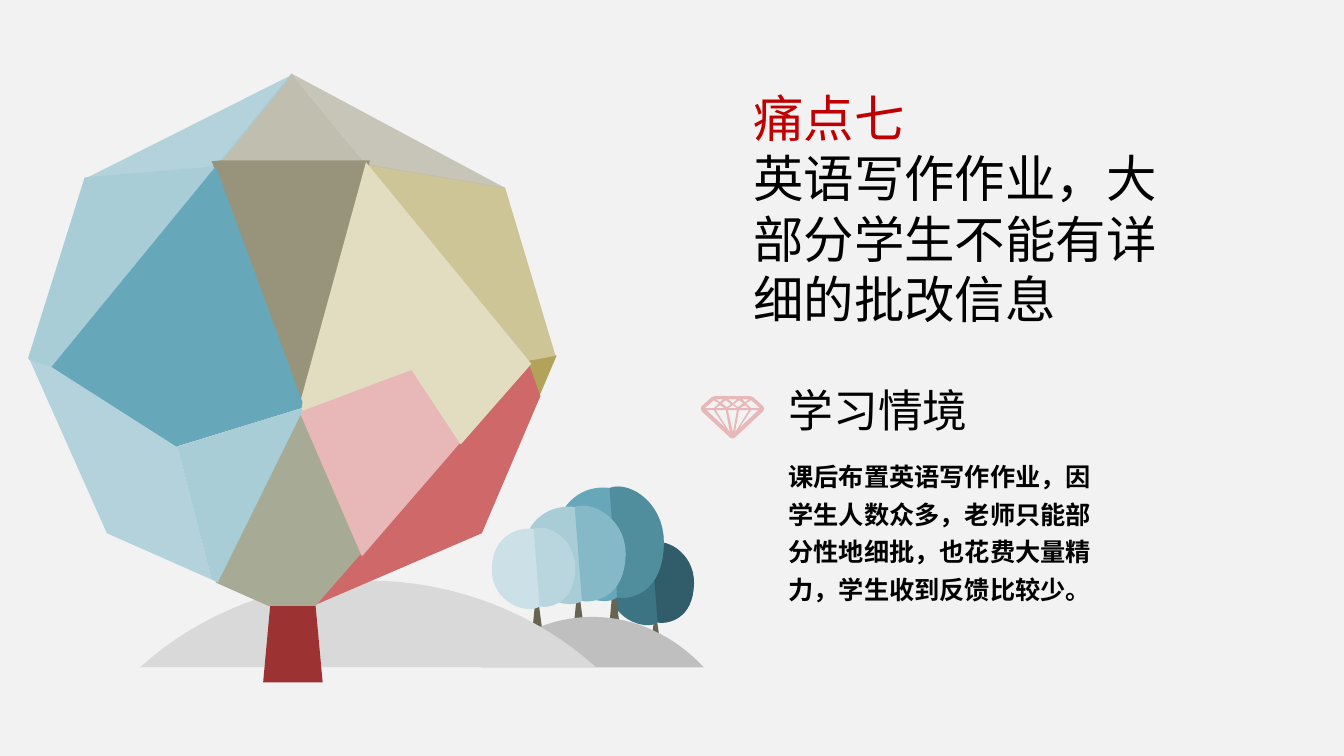
from dataclasses import dataclass

from lxml.etree import SubElement
from pptx import Presentation
from pptx.dml.color import RGBColor
from pptx.enum.text import MSO_ANCHOR, MSO_AUTO_SIZE, PP_ALIGN
from pptx.oxml.ns import qn
from pptx.shapes.base import BaseShape
from pptx.slide import Slide
from pptx.util import Inches, Pt

PAPER = RGBColor(0xF2, 0xF2, 0xF2)
BLACK = RGBColor(0x00, 0x00, 0x00)
NEAR_BLACK = RGBColor(0x01, 0x01, 0x01)
TITLE_RED = RGBColor(0xC0, 0x00, 0x00)
BARK = RGBColor(0x67, 0x64, 0x51)
RED_TRUNK = RGBColor(0x9D, 0x32, 0x32)
RED = RGBColor(0xCF, 0x68, 0x68)
PINK = RGBColor(0xE8, 0xB7, 0xB7)
DEEP_TEAL = RGBColor(0x3C, 0x74, 0x83)
TEAL = RGBColor(0x66, 0xA7, 0xB9)
SKY = RGBColor(0xA8, 0xCD, 0xD7)
PALE_SKY = RGBColor(0xCB, 0xE1, 0xE7)
BACK_HILL = RGBColor(0xBF, 0xBF, 0xBF)
FRONT_HILL = RGBColor(0xD9, 0xD9, 0xD9)
STONE = RGBColor(0xC0, 0xBE, 0xAF)
OLIVE = RGBColor(0xB1, 0xA3, 0x5A)
SAND = RGBColor(0xCE, 0xC5, 0x97)
CREAM = RGBColor(0xE2, 0xDC, 0xC1)
TAUPE = RGBColor(0x98, 0x94, 0x7C)
SAGE = RGBColor(0xA7, 0xAA, 0x95)

# A step of two numbers is a line to a point; six numbers are a cubic curve.
Step = tuple[float, ...]
Outline = list[Step]
Box = tuple[float, float, float, float]
CURVE_PIECES = 16

# Outlines in a unit box
CROWN_RIGHT: Outline = [(0.65, 0.99, 0.96, 0.97, 1, 0.57), (1.05, 0.16, 0.7, -0.06, 0.51, 0.01)]
CROWN: Outline = [(0.51, 0.01), (0.29, -0.02, 0.02, 0.12, 0.01, 0.49),
                  (-0.01, 0.92, 0.44, 1.08, 0.58, 0.97), *CROWN_RIGHT]
SHADE: Outline = [(0.51, 0.01), (0.58, 0.97), *CROWN_RIGHT]
STEM: Outline = [(0.3, 0), (0, 1), (1, 1), (0.6, 0)]
HILL: Outline = [(0.5, 0), (0.31, 0, 0.13, 0.38, 0, 1), (1, 1), (0.87, 0.38, 0.69, 0, 0.5, 0)]


@dataclass
class Tree:
    stem: Box
    crown: Box
    color: RGBColor
    shade: RGBColor
    shade_opacity: int


@dataclass
class Facet:
    color: RGBColor
    points: Outline
    opacity: int = 100


@dataclass
class Words:
    lines: list[str]
    colors: list[RGBColor]
    box: Box
    font: str
    size: int
    bold: bool = False
    spacing: float = 1.0


TREES = [
    Tree((6.46, 6.14, 0.09, 0.25), (6.03, 5.38, 0.85, 0.82), DEEP_TEAL, NEAR_BLACK, 20),
    Tree((6.04, 5.88, 0.11, 0.36), (5.49, 4.83, 1.09, 1.13), TEAL, DEEP_TEAL, 50),
    Tree((5.69, 5.92, 0.10, 0.30), (5.18, 5.02, 1.02, 0.97), SKY, TEAL, 50),
    Tree((5.28, 5.96, 0.10, 0.30), (4.87, 5.24, 0.83, 0.80), PALE_SKY, SKY, 50),
]

BIG_TREE = [
    Facet(RED_TRUNK, [(3.2, 6.77), (2.61, 6.77), (2.68, 6.01), (3.13, 6.01)]),
    Facet(STONE, [(2.22, 1.64), (3.64, 1.64), (2.89, 0.73), (2.14, 1.65)]),
    Facet(OLIVE, [(5.51, 3.52), (5.22, 3.56), (5.35, 3.93), (5.52, 3.53)]),
    Facet(SKY, [(2.9, 0.74), (0.85, 1.77), (2.15, 1.66)], 85),
    Facet(SAND, [(3.64, 1.63), (5.24, 3.58), (5.51, 3.53), (5.01, 1.86), (3.66, 1.63)]),
    Facet(STONE, [(3.65, 1.64), (5.01, 1.87), (5, 1.86), (2.89, 0.73), (3.64, 1.64)], 85),
    Facet(RED, [(3.13, 6), (4.78, 5.29), (5.36, 3.93), (5.24, 3.59)]),
    Facet(SKY, [(2.14, 1.65), (0.84, 1.76), (0.28, 3.55), (0.29, 3.57), (0.51, 3.64)]),
    Facet(TAUPE, [(3.67, 1.59), (2.2, 1.59), (2.1, 1.6), (3.01, 4.04)]),
    Facet(SAGE, [(2.14, 5.78), (2.66, 6.01), (3.13, 6.01), (3.61, 5.46), (3, 4.04)]),
    Facet(SKY, [(0.51, 3.64), (0.29, 3.56), (1.06, 5.29), (2.1, 5.75), (1.76, 4.43)], 85),
    Facet(PINK, [(2.97, 4), (2.95, 4.04), (3.59, 5.52), (4.61, 4.34), (4.1, 3.57)]),
    Facet(CREAM, [(3.63, 1.61), (2.95, 4.09), (2.97, 4.12), (2.99, 4.08),
                  (4.08, 3.67), (4.57, 4.41), (5.27, 3.61)]),
    Facet(TEAL, [(2.99, 4.05), (3, 3.99), (2.14, 1.65), (0.51, 3.64), (1.75, 4.43)]),
    Facet(SKY, [(1.76, 4.43), (2.1, 5.75), (2.16, 5.78), (3, 4.08), (2.99, 4.05)]),
]

# Diamond: right half of the rim, openings on the axis and to its right
DIAMOND_AXIS = 7.265
DIAMOND_RIM: Outline = [(7.44, 3.93), (7.47, 3.94), (7.57, 4.03), (7.58, 4.05),
                        (7.57, 4.08), (7.29, 4.34), (7.27, 4.35)]
MIDDLE_OPENINGS: list[Outline] = [
    [(7.22, 4.07), (7.27, 4.29), (7.31, 4.07)],
    [(7.27, 4.02), (7.22, 4.05), (7.31, 4.05)],
    [(7.22, 3.96), (7.27, 4), (7.31, 3.96)],
]
RIGHT_OPENINGS: list[Outline] = [
    [(7.45, 4.07), (7.33, 4.25), (7.52, 4.07)],
    [(7.33, 4.07), (7.29, 4.29), (7.43, 4.07)],
    [(7.39, 4.02), (7.34, 4.05), (7.43, 4.05)],
    [(7.45, 3.97), (7.4, 4), (7.45, 4.05), (7.54, 4.05)],
    [(7.33, 3.97), (7.28, 4.01), (7.32, 4.04), (7.37, 4)],
    [(7.36, 3.96), (7.39, 3.99), (7.43, 3.96)],
]

TITLE = Words(["痛点七", "英语写作作业，大部分学生不能有详细的批改信息"], [TITLE_RED, BLACK],
              (7.47, 0.86, 4.32, 2.42), "Open Sans", 36)
HEADING = Words(["学习情境"], [BLACK], (7.82, 3.8, 2.22, 0.54), "Open Sans", 32)
BODY = Words(["课后布置英语写作作业，因学生人数众多，老师只能部分性地细批，也花费大量精力，学生收到反馈比较少。"],
             [BLACK], (7.82, 4.5, 3.22, 1.48), "Lato", 18, True, 1.25)


def fit(outline: Outline, box: Box) -> Outline:
    """Stretch a unit outline over a box."""
    return [tuple(box[i % 2] + value * box[2 + i % 2] for i, value in enumerate(step))
            for step in outline]


def mirror(outline: Outline) -> Outline:
    return [(2 * DIAMOND_AXIS - x, y) for x, y in reversed(outline)]


def flatten(outline: Outline) -> list[tuple[int, int]]:
    """Turn lines and curves into points in EMU."""
    points = [outline[0]]
    for step in outline[1:]:
        if len(step) == 2:
            points.append(step)
            continue
        start = points[-1]
        for piece in range(1, CURVE_PIECES + 1):
            t = piece / CURVE_PIECES
            s = 1 - t
            points.append(tuple(s**3 * start[i] + 3 * s * s * t * step[i]
                                + 3 * s * t * t * step[2 + i] + t**3 * step[4 + i]
                                for i in (0, 1)))
    return [(Inches(x), Inches(y)) for x, y in points]


def draw_outlines(page: Slide, outlines: list[Outline], color: RGBColor, opacity: int = 100) -> None:
    first, *others = [flatten(outline) for outline in outlines]
    builder = page.shapes.build_freeform(*first[0])
    builder.add_line_segments(first[1:], close=True)
    for points in others:
        builder.move_to(*points[0])
        builder.add_line_segments(points[1:], close=True)
    shape = builder.convert_to_shape()
    shape.shadow.inherit = False
    shape.line.fill.background()
    shape.fill.solid()
    shape.fill.fore_color.rgb = color
    if opacity < 100:
        color_node = shape.fill._xPr.find(qn("a:solidFill"))[0]
        SubElement(color_node, qn("a:alpha")).set("val", str(opacity * 1000))


def write(box: BaseShape, words: Words) -> None:
    box.left, box.top, box.width, box.height = map(Inches, words.box)
    frame = box.text_frame
    frame.text = "\n".join(words.lines)
    frame.word_wrap = True
    frame.auto_size = MSO_AUTO_SIZE.SHAPE_TO_FIT_TEXT
    frame.vertical_anchor = MSO_ANCHOR.TOP
    frame.margin_left = frame.margin_right = frame.margin_top = frame.margin_bottom = 0
    for para, color in zip(frame.paragraphs, words.colors):
        para.alignment = PP_ALIGN.LEFT
        para.space_before = Pt(0)
        para.line_spacing = words.spacing
        span = para.runs[0]
        span.font.name, span.font.size, span.font.bold = words.font, Pt(words.size), words.bold
        span.font.color.rgb = color


def main() -> None:
    deck = Presentation()
    deck.slide_width, deck.slide_height = Inches(13.33), Inches(7.5)
    page = deck.slides.add_slide(deck.slide_layouts[1])
    page.background.fill.solid()
    page.background.fill.fore_color.rgb = PAPER

    # Small trees, hills and the large faceted tree
    for tree in TREES:
        draw_outlines(page, [fit(STEM, tree.stem)], BARK)
        draw_outlines(page, [fit(CROWN, tree.crown)], tree.color)
        draw_outlines(page, [fit(SHADE, tree.crown)], tree.shade, tree.shade_opacity)
    draw_outlines(page, [fit(HILL, (4.77, 6.12, 2.21, 0.5))], BACK_HILL)
    draw_outlines(page, [fit(HILL, (1.39, 5.76, 4.52, 0.86))], FRONT_HILL)
    for facet in BIG_TREE:
        draw_outlines(page, [facet.points], facet.color, facet.opacity)

    # Diamond icon
    rim = DIAMOND_RIM + mirror(DIAMOND_RIM)
    left_openings = [mirror(opening) for opening in RIGHT_OPENINGS]
    draw_outlines(page, [rim, *MIDDLE_OPENINGS, *RIGHT_OPENINGS, *left_openings], PINK)

    # Texts
    write(page.shapes.title, TITLE)
    write(page.shapes.add_textbox(0, 0, 0, 0), HEADING)
    body = page.placeholders[1]
    write(body, BODY)
    properties = body.text_frame.paragraphs[0]._p.get_or_add_pPr()
    properties.set("marL", "0")
    properties.set("indent", "0")
    SubElement(properties, qn("a:buNone"))

    deck.save("out.pptx")


if __name__ == "__main__":
    main()
